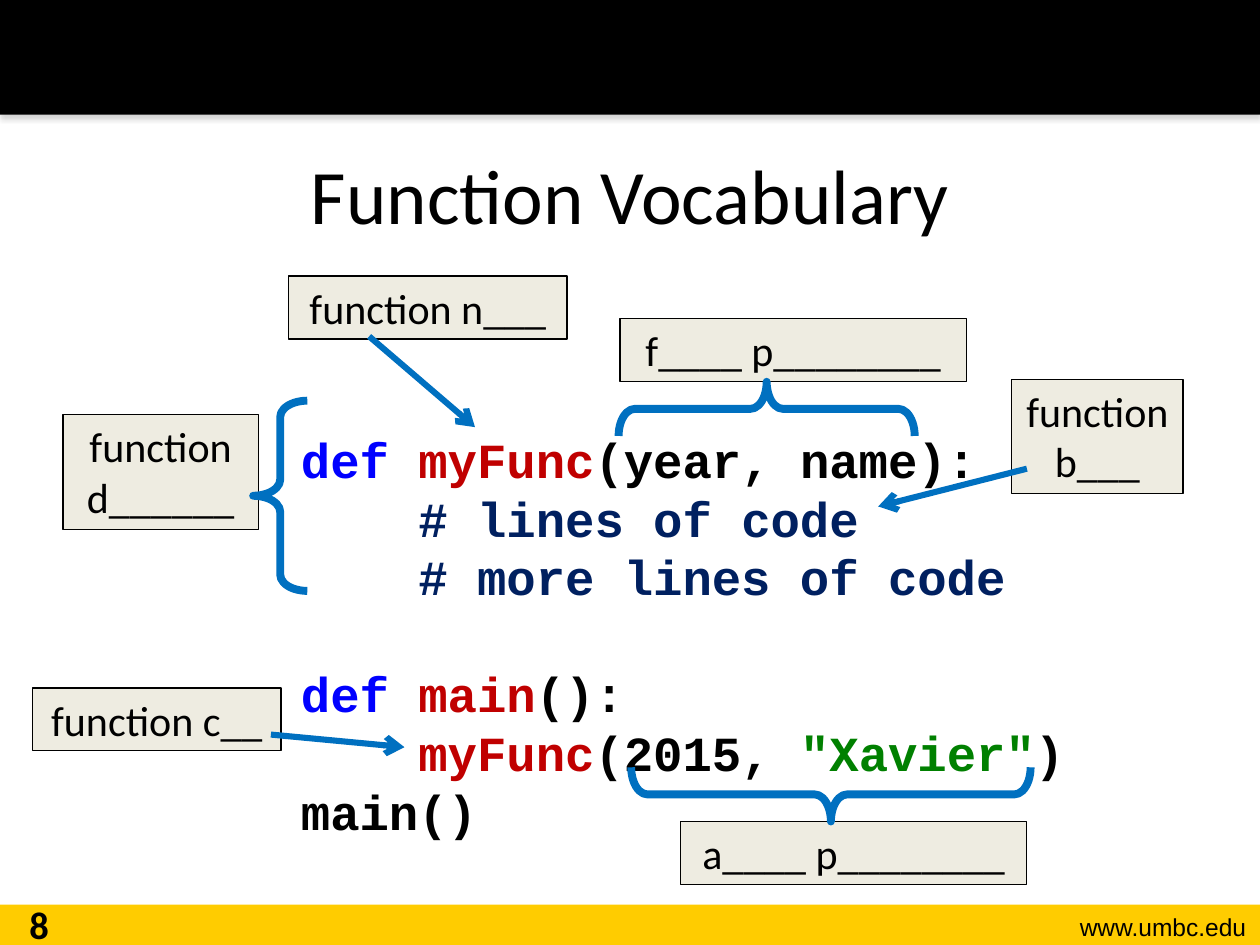
from lxml import etree
from pptx import Presentation
from pptx.dml.color import RGBColor
from pptx.enum.shapes import MSO_CONNECTOR, MSO_SHAPE
from pptx.enum.text import MSO_ANCHOR, PP_ALIGN
from pptx.oxml.ns import qn
from pptx.util import Inches, Pt

RECTANGLE, BRACE = MSO_SHAPE.RECTANGLE, MSO_SHAPE.RIGHT_BRACE
STRAIGHT = MSO_CONNECTOR.STRAIGHT
LEFT, CENTER, RIGHT = PP_ALIGN.LEFT, PP_ALIGN.CENTER, PP_ALIGN.RIGHT
TOP, MIDDLE = MSO_ANCHOR.TOP, MSO_ANCHOR.MIDDLE

BLACK = RGBColor(0x00, 0x00, 0x00)
GOLD = RGBColor(0xFF, 0xCC, 0x00)
CREAM = RGBColor(0xEE, 0xEC, 0xE1)
BLUE = RGBColor(0x00, 0x70, 0xC0)
KEYWORD = RGBColor(0x00, 0x00, 0xFF)
NAME = RGBColor(0xC0, 0x00, 0x00)
COMMENT = RGBColor(0x00, 0x20, 0x60)
STRING = RGBColor(0x00, 0x80, 0x00)

deck = Presentation()
deck.slide_width, deck.slide_height = Inches(10), Inches(7.5)
page = deck.slides.add_slide(deck.slide_layouts[6])
shapes = page.shapes
COLUMN = deck.slide_width / 100
ROW = deck.slide_height / 75


def place(left, top, width, height):
    """Turn grid columns and rows into slide lengths."""
    return [round(left * COLUMN), round(top * ROW),
            round(width * COLUMN), round(height * ROW)]


def write(box, lines, font, size, align, bold=False, anchor=TOP):
    """Fill a box with lines, each a list of (text, colour) runs."""
    frame = box.text_frame
    frame.word_wrap = True
    frame.vertical_anchor = anchor
    for index, line in enumerate(lines):
        para = frame.paragraphs[0] if index == 0 else frame.add_paragraph()
        para.alignment = align
        for text, color in line:
            span = para.add_run()
            span.text = text
            span.font.name = font
            span.font.size = Pt(size)
            span.font.bold = bold
            span.font.color.rgb = color


# Footer and header bars
for top, height, color in [(71.8, 3.2, GOLD), (0, 9.1, BLACK)]:
    bar = shapes.add_shape(RECTANGLE, *place(0, top, 100, height))
    bar.shadow.inherit = False
    bar.fill.solid()
    bar.fill.fore_color.rgb = color
    bar.line.fill.background()

# Soft shadow under the header, the last bar drawn
effects = bar._element.spPr.find(qn("a:effectLst"))
shadow = etree.SubElement(effects, qn("a:outerShdw"), blurRad=str(Pt(3.1)),
                          dist=str(Pt(1.8)), dir="5400000", rotWithShape="0")
shade = etree.SubElement(shadow, qn("a:srgbClr"), val="808080")
etree.SubElement(shade, qn("a:alpha"), val="35000")

# Web address, title and page number
for area, text, font, size, align, bold, anchor in [
    ((80, 71.9, 19.9, 3.4), "www.umbc.edu", "Arial", 14, RIGHT, False, TOP),
    ((5, 9.1, 90, 12.5), "Function Vocabulary", "Calibri", 44, CENTER, False, MIDDLE),
    ((0, 71, 6.2, 4), "8", "Calibri", 22, CENTER, True, TOP),
]:
    box = shapes.add_textbox(*place(*area))
    write(box, [[(text, BLACK)]], font, size, align, bold, anchor)

# Code listing
LINE_PITCH = Pt(33.5)
code = shapes.add_textbox(*place(22.9, 32.9, 82.1, 34))
code.text_frame.margin_top = round(1.2 * ROW)
write(code, [
    [("def ", KEYWORD), ("myFunc", NAME), ("(year, name):", BLACK)],
    [("    ", BLACK), ("# lines of code", COMMENT)],
    [("    # more lines of code", COMMENT)],
    [("def ", KEYWORD), ("main", NAME), ("():", BLACK)],
    [("    ", BLACK), ("myFunc", NAME), ("(2015, ", BLACK),
     ('"Xavier"', STRING), (")", BLACK)],
    [("main()", BLACK)],
], "Courier New", 28, LEFT, bold=True)
for para in code.text_frame.paragraphs:
    para.line_spacing = LINE_PITCH
code.text_frame.paragraphs[3].space_before = LINE_PITCH

# Vocabulary labels
for text, *area in [
    ("function n___", 22.9, 21.9, 22.1, 5),
    ("f____ p________", 49.2, 25.3, 27.5, 5),
    ("a____ p________", 54, 65.2, 27.5, 5),
    ("function d______", 5, 32.9, 15.5, 9.1),
    ("function c__", 2.6, 54.6, 19.7, 5),
    ("function b___", 80.3, 30.1, 13.6, 9.1),
]:
    label = shapes.add_shape(RECTANGLE, *place(*area))
    label.shadow.inherit = False
    label.fill.solid()
    label.fill.fore_color.rgb = CREAM
    label.line.color.rgb = BLACK
    label.line.width = Pt(0.75)
    write(label, [[(text, BLACK)]], "Calibri", 24, CENTER)

# Braces around the parameters and the definition
for left, top, length, turn in [
    (58.7, 20.7, 23.5, 90),
    (63.8, 47.2, 31.7, 270),
    (20.1, 31.8, 15.1, 0),
]:
    brace = shapes.add_shape(BRACE, *place(left, top, 4.3, length))
    brace.shadow.inherit = False
    brace.fill.background()
    brace.line.color.rgb = BLUE
    brace.line.width = Pt(4.5)
    brace.adjustments[0] = 0.3
    brace.rotation = turn
    brace._element.spPr.find(qn("a:xfrm")).set("flipH", "1")

# Arrows from labels into the code
for start_x, start_y, end_x, end_y in [
    (29.3, 26.7, 37.7, 33.9),
    (21.5, 58.3, 32.1, 59.3),
    (81.5, 37.2, 69.7, 40.2),
]:
    arrow = shapes.add_connector(STRAIGHT, *place(start_x, start_y, end_x, end_y))
    arrow.line.color.rgb = BLUE
    arrow.line.width = Pt(3.5)
    etree.SubElement(arrow.line._get_or_add_ln(), qn("a:tailEnd"), type="arrow")
    etree.SubElement(arrow._element.spPr, qn("a:effectLst"))

deck.save("out.pptx")
